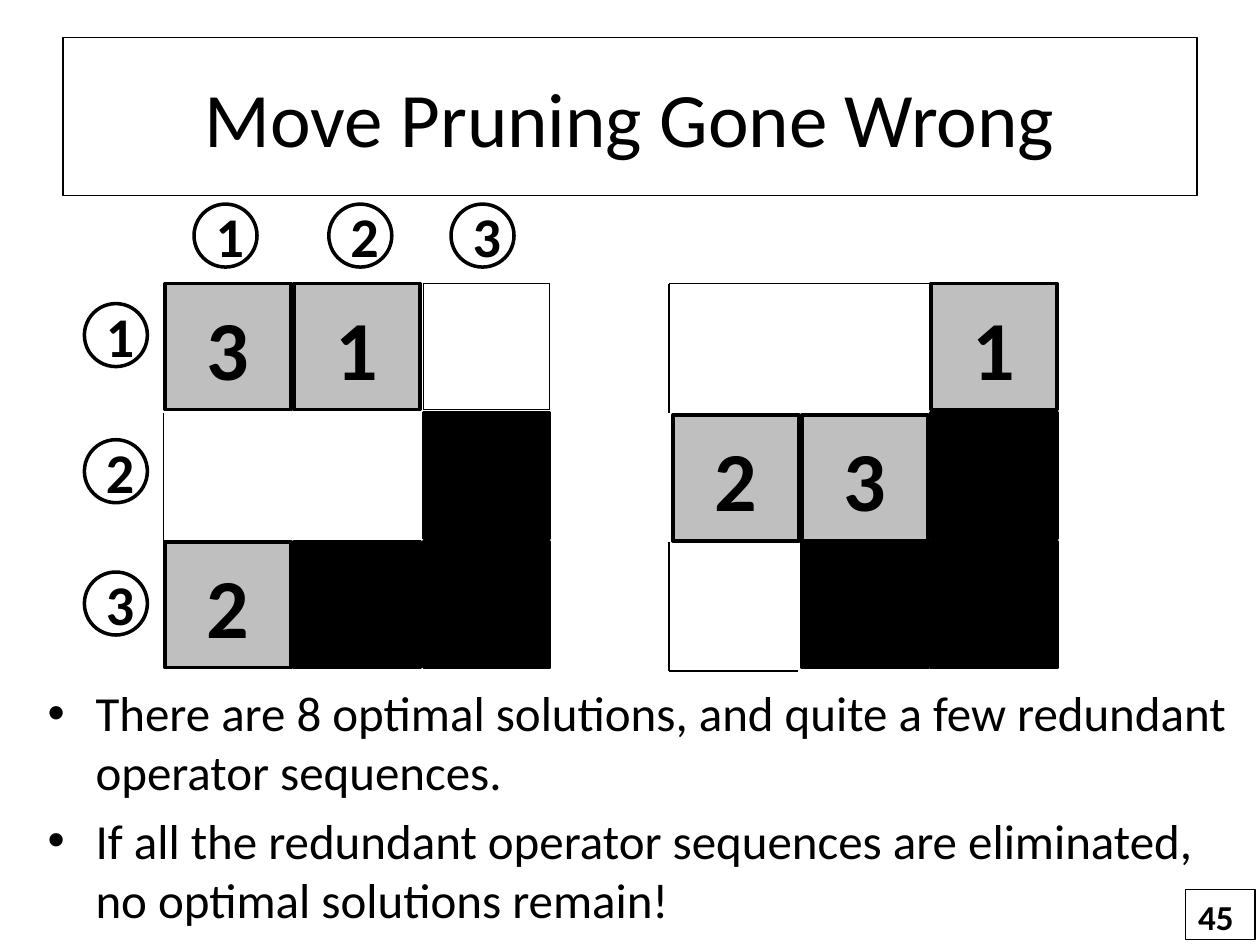
from lxml import etree
from pptx import Presentation
from pptx import util as u
from pptx.dml.color import RGBColor
from pptx.enum import shapes, text
from pptx.oxml.ns import qn

COLORS = {"ink": "000000", "tile": "BFBFBF", "paper": "FFFFFF"}
FONT = "Calibri"
WIDTH, HEIGHT = 10, 7.5

# Both boards share one grid: square cells of side CELL, one PITCH apart
CELL, PITCH = 1, 1.025
TOP = 2.25
START_LEFT, GOAL_LEFT = 1.31, 5.34
GOAL_EDGE = 5.31
BADGE = 0.5


def color(name):
    return RGBColor.from_string(COLORS[name])


def add_span(para, words, size, bold=False):
    span = para.add_run()
    span.text = words
    span.font.name = FONT
    span.font.size = u.Pt(size)
    span.font.bold = bold
    span.font.color.rgb = color("ink")


def add_box(page, left, top, width, height, fill=None, line=None, words="",
            size=48, bold=True, align=text.PP_ALIGN.CENTER,
            anchor=text.MSO_ANCHOR.MIDDLE, kind=shapes.MSO_SHAPE.RECTANGLE):
    box = page.shapes.add_shape(kind, *map(u.Inches, (left, top, width, height)))
    box.shadow.inherit = False
    if fill:
        box.fill.solid()
        box.fill.fore_color.rgb = color(fill)
    else:
        box.fill.background()
    if line is None:
        box.line.fill.background()
    else:
        box.line.color.rgb = color("ink")
        box.line.width = u.Pt(line)
    if words:
        box.text_frame.vertical_anchor = anchor
        para = box.text_frame.paragraphs[0]
        para.alignment = align
        add_span(para, words, size, bold)


def add_cell(page, board_left, column, row, fill, line=2, words="", drop=0):
    add_box(page, board_left + column * PITCH, TOP + row * PITCH + drop,
            CELL, CELL, fill, line, words)


def add_badge(page, left, top, words):
    add_box(page, left, top, BADGE, BADGE, line=2, words=words, size=32,
            kind=shapes.MSO_SHAPE.OVAL)


def add_edge(page, x1, y1, x2, y2):
    edge = page.shapes.add_connector(shapes.MSO_CONNECTOR.STRAIGHT,
                                     *map(u.Inches, (x1, y1, x2, y2)))
    edge.line.color.rgb = color("ink")
    edge.line.width = u.Pt(0.75)
    etree.SubElement(edge._element.spPr, qn("a:effectLst"))


def add_bullets(page, left, top, width, height, items, size=28):
    box = page.shapes.add_textbox(*map(u.Inches, (left, top, width, height)))
    frame = box.text_frame
    frame.word_wrap = True
    for index, item in enumerate(items):
        para = frame.add_paragraph() if index else frame.paragraphs[0]
        para.space_before = u.Pt(size * 0.2)
        props = para._p.get_or_add_pPr()
        props.set("marL", str(u.Inches(0.38)))
        props.set("indent", str(-u.Inches(0.38)))
        etree.SubElement(props, qn("a:buFont")).set("typeface", "Arial")
        etree.SubElement(props, qn("a:buChar")).set("char", "•")
        add_span(para, item, size)


def add_walls(page, board_left):
    for column, row in ((2, 1), (1, 2), (2, 2)):
        add_cell(page, board_left, column, row, "ink")


def add_start_board(page):
    for column in (0, 1):
        add_cell(page, START_LEFT, column, 1, "paper", line=None)
    add_cell(page, START_LEFT, 2, 0, "paper", line=0)
    for column, row, words in ((0, 0, "3"), (1, 0, "1"), (0, 2, "2")):
        add_cell(page, START_LEFT, column, row, "tile", words=words)
    add_walls(page, START_LEFT)
    add_edge(page, 1.3, TOP + PITCH, 1.3, TOP + 2 * PITCH)


def add_goal_board(page):
    bottom = TOP + 3 * PITCH
    add_edge(page, GOAL_EDGE, TOP, 7.44, TOP)
    add_cell(page, GOAL_LEFT, 2, 0, "tile", words="1")
    for column, words in enumerate("23"):
        add_cell(page, GOAL_LEFT, column, 1, "tile", words=words, drop=0.02)
    add_walls(page, GOAL_LEFT)
    for row in (0, 2):
        add_edge(page, GOAL_EDGE, TOP + row * PITCH,
                 GOAL_EDGE, TOP + (row + 1) * PITCH)
    add_edge(page, GOAL_EDGE, bottom, GOAL_EDGE + PITCH, bottom)


def main():
    deck = Presentation()
    deck.slide_width, deck.slide_height = u.Inches(WIDTH), u.Inches(HEIGHT)
    page = deck.slides.add_slide(deck.slide_layouts[6])

    # Title, bullets and page number
    add_box(page, WIDTH * 0.05, HEIGHT * 0.04, WIDTH * 0.9, HEIGHT / 6,
            line=0.75, words="Move Pruning Gone Wrong", size=44, bold=False)
    add_bullets(page, 0.28, 5.37, 9.61, 2.31, (
        "There are 8 optimal solutions, and quite a few redundant "
        "operator sequences.",
        "If all the redundant operator sequences are eliminated, "
        "no optimal solutions remain!"))
    add_box(page, 9.41, 7.06, 0.55, 0.4, line=0.75, words="45", size=20,
            align=text.PP_ALIGN.LEFT, anchor=text.MSO_ANCHOR.TOP)

    # Puzzle boards
    add_start_board(page)
    add_goal_board(page)

    # Row and column numbers
    for number, top in enumerate((2.41, 3.49, 4.54), 1):
        add_badge(page, 0.67, top, str(number))
    for number, left in enumerate((1.54, 2.61, 3.58), 1):
        add_badge(page, left, 1.62, str(number))

    deck.save("out.pptx")


if __name__ == "__main__":
    main()
